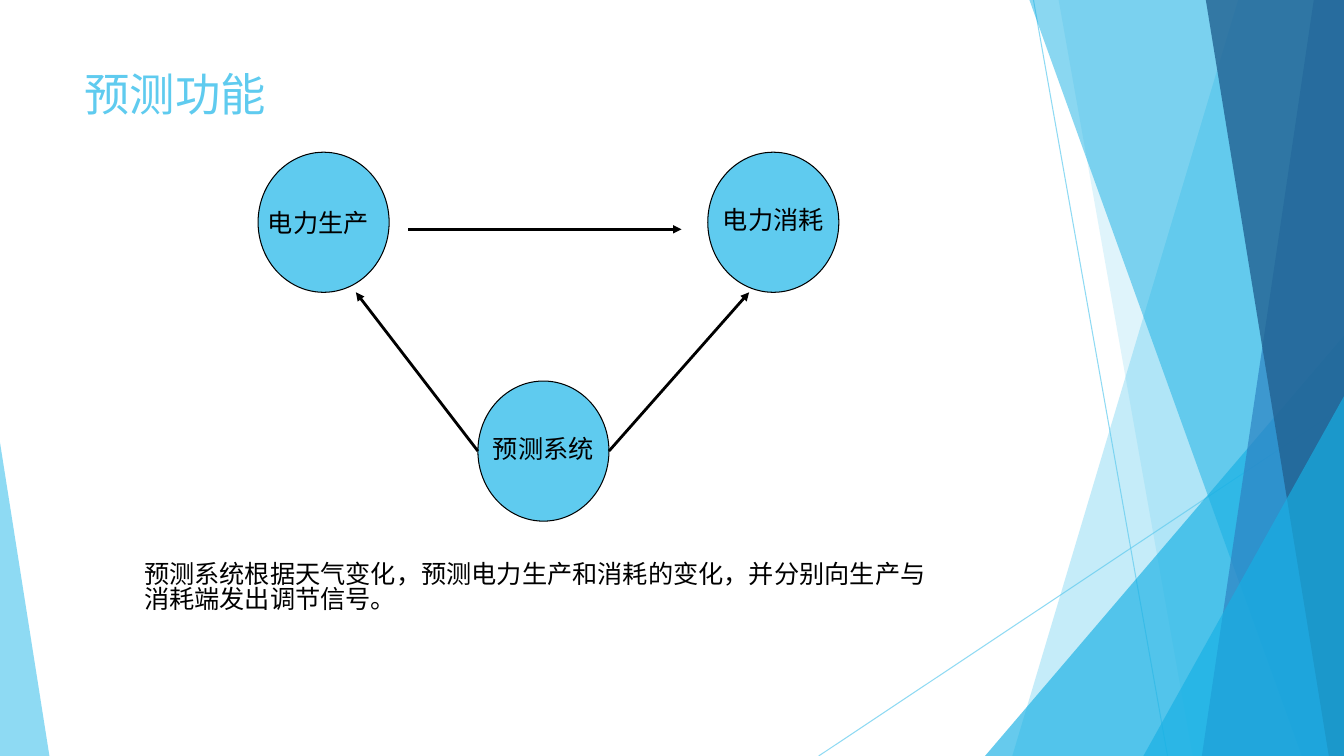
from dataclasses import dataclass

from lxml import etree
from pptx import Presentation
from pptx.dml.color import RGBColor
from pptx.enum.shapes import MSO_CONNECTOR, MSO_SHAPE
from pptx.enum.text import MSO_ANCHOR, PP_ALIGN
from pptx.oxml.ns import qn
from pptx.util import Inches, Pt

STRAIGHT = MSO_CONNECTOR.STRAIGHT
OVAL, TRIANGLE = MSO_SHAPE.OVAL, MSO_SHAPE.ISOSCELES_TRIANGLE
TOP, MIDDLE = MSO_ANCHOR.TOP, MSO_ANCHOR.MIDDLE
LEFT, CENTER = PP_ALIGN.LEFT, PP_ALIGN.CENTER


@dataclass(frozen=True)
class Theme:
    sky: str = "5FCBEF"
    cyan: str = "17B0E4"
    blue: str = "2E83C3"
    navy: str = "226292"
    ink: str = "000000"
    title_font: str = "Karla"
    body_font: str = "Noto Sans CJK SC"
    title_size: float = 32.4
    body_size: float = 18
    title_spacing: float = 0.9
    body_spacing: float = 0.82
    hairline: float = 0.75
    arrow_line: float = 2


THEME = Theme()
SLIDE_WIDTH, SLIDE_HEIGHT = 13.33, 7.5


def set_alpha(fill_parent, percent):
    """Make the solid colour inside an element partly transparent."""
    color = fill_parent.find(qn("a:solidFill"))[0]
    etree.SubElement(color, qn("a:alpha"), val=str(percent * 1000))


def paint(shape, color, percent=100, outline=None):
    shape.shadow.inherit = False
    shape.fill.solid()
    shape.fill.fore_color.rgb = RGBColor.from_string(color)
    if percent < 100:
        set_alpha(shape.element.spPr, percent)
    if outline:
        shape.line.color.rgb = RGBColor.from_string(outline)
        shape.line.width = Pt(THEME.hairline)
    else:
        shape.line.fill.background()


def write(shape, text, color=THEME.ink, font=THEME.body_font, size=THEME.body_size,
          spacing=THEME.body_spacing, align=LEFT, anchor=TOP, wrap=True):
    frame = shape.text_frame
    frame.text = text
    frame.word_wrap = wrap
    frame.vertical_anchor = anchor
    paragraph = frame.paragraphs[0]
    paragraph.alignment = align
    paragraph.line_spacing = spacing
    run_font = paragraph.runs[0].font
    run_font.name = font
    run_font.size = Pt(size)
    run_font.color.rgb = RGBColor.from_string(color)
    latin = run_font._element.find(qn("a:latin"))
    latin.addnext(latin.makeelement(qn("a:ea"), {"typeface": THEME.body_font}))


def add_text(slide, box, text, **style):
    write(slide.shapes.add_textbox(*map(Inches, box)), text, **style)


def add_line(slide, start, end, color, width):
    connector = slide.shapes.add_connector(STRAIGHT, *map(Inches, (*start, *end)))
    connector.line.color.rgb = RGBColor.from_string(color)
    connector.line.width = Pt(width)
    etree.SubElement(connector.element.spPr, qn("a:effectLst"))
    return connector


def add_arrow(slide, start, end):
    connector = add_line(slide, start, end, THEME.ink, THEME.arrow_line)
    etree.SubElement(connector.line._get_or_add_ln(), qn("a:tailEnd"), type="triangle")


def add_band(slide, box, points, color, percent):
    """Draw a translucent polygon whose points are relative to the box."""
    left, top, _, _ = box
    corners = [(Inches(left + x), Inches(top + y)) for x, y in points]
    builder = slide.shapes.build_freeform(*corners[0], scale=1.0)
    builder.add_line_segments(corners[1:], close=True)
    paint(builder.convert_to_shape(), color, percent)


def add_corner(slide, box, apex, color, percent):
    """Draw a right triangle; apex 0 stands at the left, 1 at the right."""
    triangle = slide.shapes.add_shape(TRIANGLE, *map(Inches, box))
    triangle.adjustments[0] = apex
    paint(triangle, color, percent)


def draw_facets(slide, box):
    """Draw the translucent facets along both edges of the box."""
    left, top, width, height = box
    right, bottom = left + width, top + height

    def band(top_x, bottom_x, color, percent):
        points = [(top_x, 0), (width, 0), (width, height), (bottom_x, height)]
        add_band(slide, box, points, color, percent)

    def corner(corner_width, corner_height, color, percent, apex=1):
        x = right - corner_width if apex else left
        corner_box = (x, bottom - corner_height, corner_width, corner_height)
        add_corner(slide, corner_box, apex, color, percent)

    rays = [((10.25, 0), (11.58, height)), ((width, 4.03), (8.12, height))]
    for (x1, y1), (x2, y2) in rays:
        ray = add_line(slide, (left + x1, top + y1), (left + x2, top + y2),
                       THEME.sky, THEME.hairline)
        set_alpha(ray.line._get_or_add_ln(), 70)
    band(12.28, 10.04, THEME.sky, 36)
    band(10.5, 11.83, THEME.sky, 20)
    corner(3.56, 4.17, THEME.cyan, 66)
    band(10.21, 12.91, THEME.cyan, 50)
    band(13.03, 11.92, THEME.blue, 70)
    band(11.96, 13.18, THEME.navy, 80)
    corner(1.99, 3.57, THEME.cyan, 66)
    corner(0.49, 3.11, THEME.sky, 70, apex=0)


def draw_forecast_diagram(slide, box):
    """Draw production, consumption and the forecast system that steers both."""
    left, top, width, height = box
    node_width, node_height = 1.3, 1.39
    production = (left, top)
    consumption = (left + width - node_width, top)
    system = (left + 2.18, top + height - node_height)

    for (x, y), label in ((consumption, "电力消耗"), (production, None), (system, "预测系统")):
        node = slide.shapes.add_shape(OVAL, *map(Inches, (x, y, node_width, node_height)))
        paint(node, THEME.sky, outline=THEME.ink)
        if label:
            write(node, label, align=CENTER, anchor=MIDDLE, wrap=False)
    add_text(slide, (left, top + 0.55, node_width, 0.4), "电力生产")

    flow_y = top + 0.765
    node_bottom = top + node_height
    system_x, system_y = system[0], system[1] + node_height / 2
    add_arrow(slide, (left + 1.49, flow_y), (left + 4.2, flow_y))
    add_arrow(slide, (system_x + node_width, system_y), (consumption[0] + 0.41, node_bottom))
    add_arrow(slide, (system_x, system_y), (production[0] + 0.97, node_bottom))


def main():
    presentation = Presentation()
    presentation.slide_width = Inches(SLIDE_WIDTH)
    presentation.slide_height = Inches(SLIDE_HEIGHT)
    slide = presentation.slides.add_slide(presentation.slide_layouts[6])
    draw_facets(slide, (0, 0, SLIDE_WIDTH, SLIDE_HEIGHT))
    add_text(slide, (0.74, 0.67, 9.4, 0.9), "预测功能", color=THEME.sky,
             font=THEME.title_font, size=THEME.title_size, spacing=THEME.title_spacing)
    draw_forecast_diagram(slide, (2.56, 1.51, 5.76, 3.66))
    add_text(slide, (1.33, 5.54, 8.12, 0.71),
             "预测系统根据天气变化，预测电力生产和消耗的变化，并分别向生产与消耗端发出调节信号。")
    presentation.save("out.pptx")


if __name__ == "__main__":
    main()
